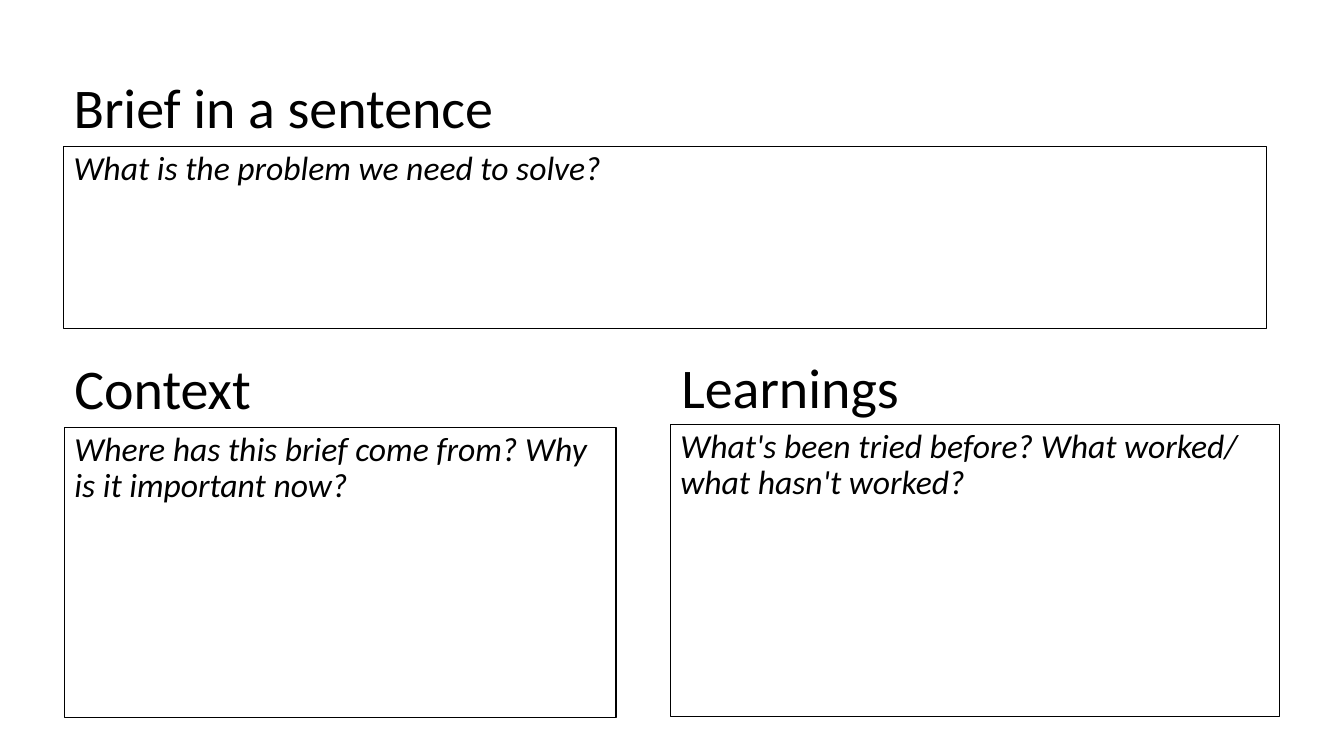
import pptx
import pptx.util
import pptx.dml.color
import pptx.enum.text
from pptx.util import Inches

BLACK = pptx.dml.color.RGBColor(0, 0, 0)
ANCHOR = pptx.enum.text.MSO_ANCHOR


def write(sp, box, text, size, anchor, italic=False, before=0):
    sp.left, sp.top, sp.width, sp.height = [Inches(v) for v in box]
    tf = sp.text_frame
    tf.word_wrap = True
    tf.auto_size = pptx.enum.text.MSO_AUTO_SIZE.NONE
    tf.vertical_anchor = anchor
    p = tf.paragraphs[0]
    p.alignment = pptx.enum.text.PP_ALIGN.LEFT
    p.line_spacing = 0.9
    p.space_before = pptx.util.Pt(before)
    r = p.add_run()
    r.text = text
    r.font.name = "Calibri"
    r.font.size = pptx.util.Pt(size)
    r.font.bold = False
    r.font.italic = italic
    r.font.color.rgb = BLACK


prs = pptx.Presentation()
prs.slide_width = Inches(13.33)
prs.slide_height = Inches(7.5)
s = prs.slides.add_slide(prs.slide_layouts[0])

sections = [
    ("Brief in a sentence", (0.63, 0.72, 6.71, 0.73),
     "What is the problem we need to solve?", (0.63, 1.45, 11.93, 1.81)),
    ("Learnings", (6.66, 3.49, 6.67, 0.73),
     "What's been tried before? What worked/ what hasn't worked?", (6.65, 4.21, 6.04, 2.9)),
    ("Context", (0.64, 3.03, 4.24, 1.2),
     "Where has this brief come from? Why is it important now?", (0.64, 4.24, 5.47, 2.88)),
]

for i, (heading, heading_box, prompt, prompt_box) in enumerate(sections):
    if i == 0:
        title, body = s.shapes.title, s.placeholders[1]
    else:
        title, body = [s.shapes.add_textbox(0, 0, 0, 0) for _ in range(2)]
    write(title, heading_box, heading, 40, ANCHOR.BOTTOM)
    write(body, prompt_box, prompt, 24, ANCHOR.TOP, italic=True, before=10)
    body.line.color.rgb = BLACK
    body.line.width = pptx.util.Pt(0.75)

prs.save("out.pptx")
